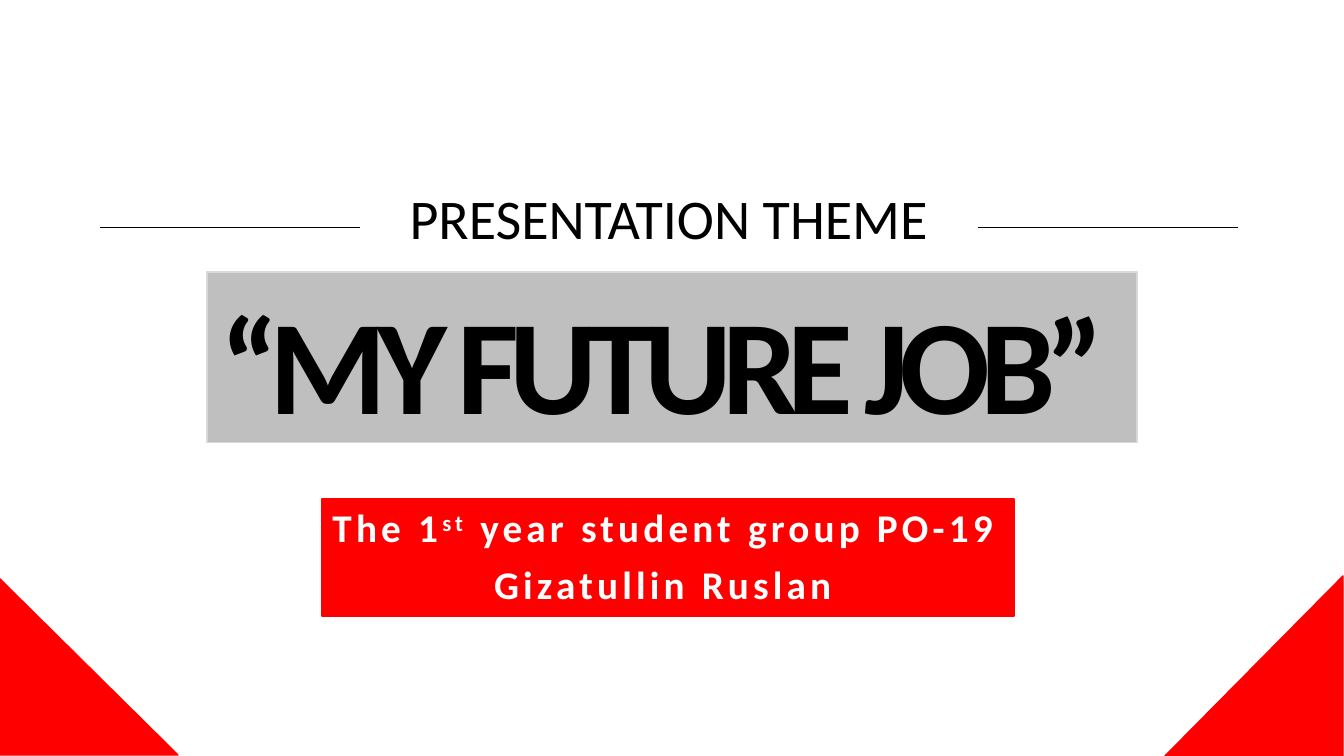
from typing import NamedTuple

from lxml import etree
from pptx import Presentation, util as u
from pptx.dml.color import RGBColor
from pptx.enum import shapes, text
from pptx.oxml import ns

PX = 12192000 / 1344
RED, BLACK, WHITE = "FF0000", "000000", "FFFFFF"


class Block(NamedTuple):
    kind: shapes.MSO_SHAPE
    box: tuple[int, int, int, int]
    fill: str
    line: str
    rotation: int = 0


class Style(NamedTuple):
    size: int
    color: str
    bold: bool = False
    spacing: int = 0


def px(length: float) -> u.Emu:
    return u.Emu(round(length * PX))


def paint(color_format, color: str) -> None:
    color_format.rgb = RGBColor.from_string(color)


def add_block(slide, block: Block) -> None:
    shape = slide.shapes.add_shape(block.kind, *map(px, block.box))
    shape.shadow.inherit = False
    shape.rotation = block.rotation
    if block.kind == shapes.MSO_SHAPE.ISOSCELES_TRIANGLE:
        shape.adjustments[0] = 1
    shape.fill.solid()
    paint(shape.fill.fore_color, block.fill)
    paint(shape.line.color, block.line)
    shape.line.width = u.Pt(1)


def add_rule(slide, left: int, right: int, y: int) -> None:
    rule = slide.shapes.add_connector(
        shapes.MSO_CONNECTOR.STRAIGHT, px(left), px(y), px(right), px(y))
    paint(rule.line.color, BLACK)
    rule.line.width = u.Pt(0.5)
    etree.SubElement(rule._element.spPr, ns.qn("a:effectLst"))


def set_frame(shape, anchor: text.MSO_ANCHOR, insets: tuple[int, int, int, int]) -> None:
    frame = shape.text_frame
    left, top, right, bottom = map(px, insets)
    settings = {
        "word_wrap": True, "auto_size": text.MSO_AUTO_SIZE.NONE,
        "vertical_anchor": anchor, "margin_left": left, "margin_top": top,
        "margin_right": right, "margin_bottom": bottom,
    }
    for name, value in settings.items():
        setattr(frame, name, value)


def write(paragraph, runs: list[tuple[str, int]], style: Style, before: int = 0) -> None:
    """Fill a centred paragraph with (wording, raised percent) runs."""
    layout = {"alignment": text.PP_ALIGN.CENTER, "line_spacing": 0.9,
              "space_before": u.Pt(before)}
    for name, value in layout.items():
        setattr(paragraph, name, value)
    look = {"name": "Calibri", "size": u.Pt(style.size), "bold": style.bold}
    for wording, raised in runs:
        run = paragraph.add_run()
        run.text = wording
        for name, value in look.items():
            setattr(run.font, name, value)
        paint(run.font.color, style.color)
        properties = run._r.get_or_add_rPr()
        properties.set("spc", str(style.spacing * 100))
        if raised:
            properties.set("baseline", str(raised * 1000))


BANDS = [
    Block(shapes.MSO_SHAPE.RECTANGLE, (322, 499, 692, 117), RED, RED),
    Block(shapes.MSO_SHAPE.RECTANGLE, (207, 272, 930, 171), "BFBFBF", "D9D9D9"),
]
CORNERS = [
    Block(shapes.MSO_SHAPE.ISOSCELES_TRIANGLE, (1165, 576, 178, 180), RED, RED),
    Block(shapes.MSO_SHAPE.ISOSCELES_TRIANGLE, (-1, 576, 178, 180), RED, RED, 90),
]
AUTHOR_LINES = [
    [("The 1", 0), ("st", 30), (" year student group PO-19", 0)],
    [("Gizatullin Ruslan", 0)],
]


def main() -> None:
    deck = Presentation()
    deck.slide_width, deck.slide_height = px(1344), px(756)
    slide = deck.slides.add_slide(deck.slide_layouts[5])

    for band in BANDS:
        add_block(slide, band)

    heading = slide.shapes.title
    heading.left, heading.top, heading.width, heading.height = map(px, (226, 170, 885, 102))
    set_frame(heading, text.MSO_ANCHOR.MIDDLE, (10, 5, 10, 5))
    write(heading.text_frame.paragraphs[0], [("PRESENTATION THEME", 0)], Style(40, BLACK))

    author = slide.shapes.add_textbox(*map(px, (177, 489, 974, 126)))
    set_frame(author, text.MSO_ANCHOR.TOP, (16, 20, 18, 4))
    frame = author.text_frame
    for index, runs in enumerate(AUTHOR_LINES):
        paragraph = frame.add_paragraph() if index else frame.paragraphs[0]
        write(paragraph, runs, Style(28, WHITE, True, 3), before=10 * index)

    theme = slide.shapes.add_textbox(*map(px, (146, 256, 1033, 188)))
    set_frame(theme, text.MSO_ANCHOR.BOTTOM, (8, 5, 8, 0))
    paint(theme.line.color, WHITE)
    theme.line.width = u.Pt(0.75)
    write(theme.text_frame.paragraphs[0], [("“MY FUTURE JOB”", 0)],
          Style(96, BLACK, True, -7))

    for left in (100, 978):
        add_rule(slide, left, left + 260, 227)
    for corner in CORNERS:
        add_block(slide, corner)

    deck.save("out.pptx")


if __name__ == "__main__":
    main()
